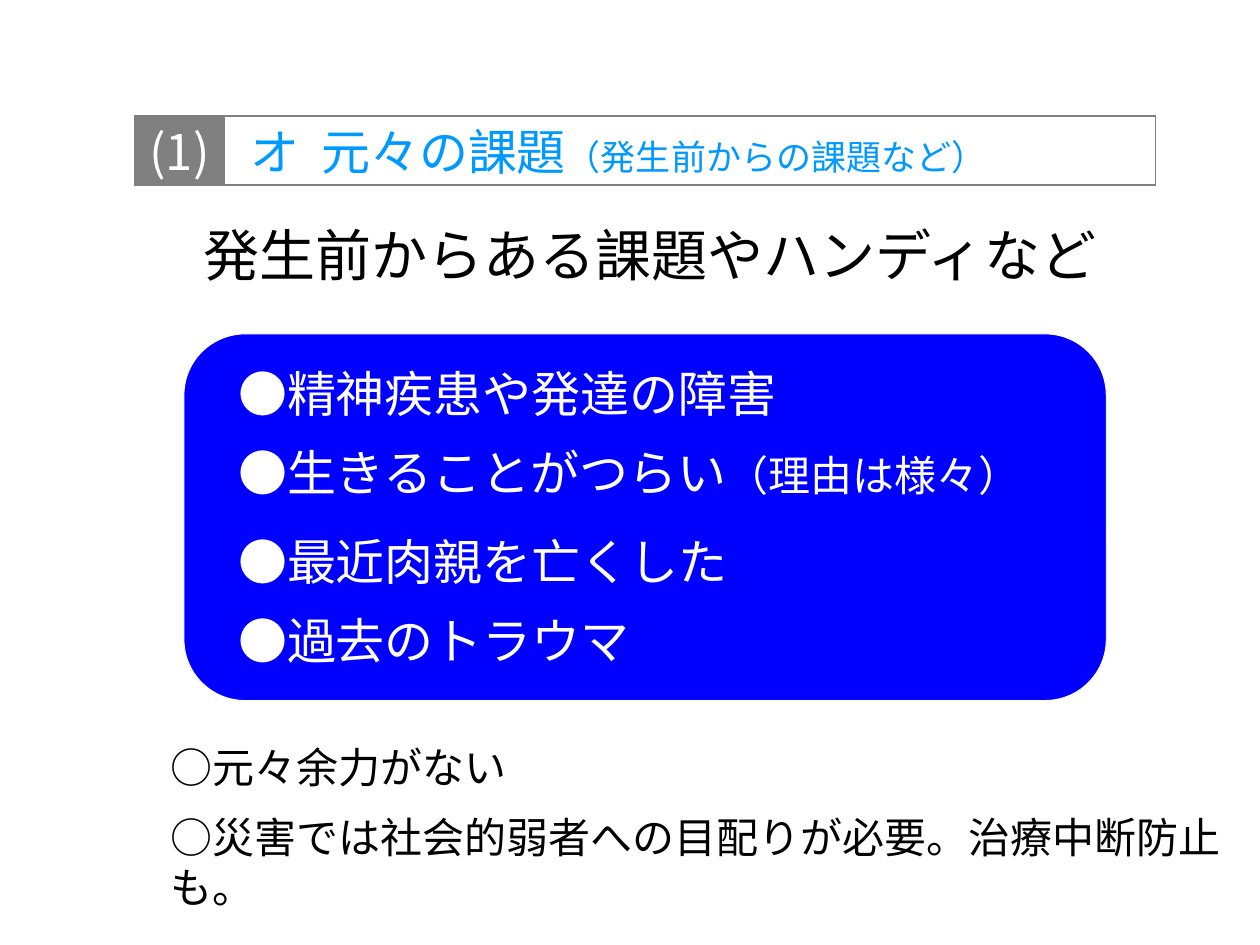
from lxml.etree import SubElement as Sub
from pptx import Presentation
from pptx.dml.color import RGBColor as RGB
from pptx.enum.shapes import MSO_SHAPE as Shape
from pptx.enum.text import MSO_ANCHOR as Anchor, PP_ALIGN as Align
from pptx.oxml.ns import qn
from pptx.util import Inches as In, Pt

# Content: each line is a list of (text, size name) runs
HEAD = [
    dict(runs=[("(1)", "big")], ink="white", fill="gray", face="cjk", left=0.04, align=Align.CENTER),
    dict(runs=[("オ\t元々の課題", "big"), ("（発生前からの課題など）", "small")],
         ink="sky", fill="white", face="latin", left=0.21, align=Align.LEFT),
]
TITLE = [("発生前からある課題やハンディなど", "title")]
ISSUES = [
    [("●精神疾患や発達の障害", "big")],
    [("●生きることがつらい", "big"), ("（理由は様々）", "mid")],
    [("●最近肉親を亡くした", "big")],
    [("●過去のトラウマ", "big")],
]
NOTES = [
    [("○元々余力がない", "mid")],
    [("○災害では社会的弱者への目配りが必要。治療中断防止も。", "mid")],
]

THEME = dict(
    color=dict(white="FFFFFF", black="000000", gray="808080", sky="0099FF", blue="0000FF"),
    size=dict(title=32, big=28, mid=24, small=20),
    face=dict(cjk="Noto Sans CJK JP", latin="Arial"),
    lead=1.19,
)
PAD = dict(margin_left=In(0.04), margin_right=In(0.04), margin_top=In(0.08), margin_bottom=0)
GRID = dict(left=1.85, top=2.81, step=0.63, pair=1.33)
NOTE = dict(left=1.31, top=5.81, step=0.55)
TAB = 0.56


def color(name):
    return RGB.from_string(THEME["color"][name])


def apply(obj, vals):
    for key, val in vals.items():
        setattr(obj, key, val)


def write(para, runs, ink, face="cjk", tight=True):
    if tight:
        para.line_spacing = Pt(round(THEME["size"][runs[0][1]] * THEME["lead"], 1))
    for text, size in runs:
        run = para.add_run()
        run.text = text
        apply(run.font, dict(size=Pt(THEME["size"][size]), name=THEME["face"][face]))
        run.font.color.rgb = color(ink)
        Sub(run.font._element, qn("a:ea"), typeface=THEME["face"]["cjk"])


def label(area, runs, ink, **vals):
    frame = slide.shapes.add_textbox(*map(In, area)).text_frame
    apply(frame, dict(word_wrap=True, **vals))
    return frame.paragraphs[0], runs, ink


def edge(cell):
    props = cell._tc.get_or_add_tcPr()
    for spot, side in enumerate(("lnL", "lnR", "lnT", "lnB")):
        line = props.makeelement(qn("a:" + side), dict(w=str(Pt(1))))
        props.insert(spot, line)
        Sub(Sub(line, qn("a:solidFill")), qn("a:srgbClr"), val=THEME["color"]["gray"])


deck = Presentation()
apply(deck, dict(slide_width=In(10), slide_height=In(7.5)))
slide = deck.slides.add_slide(deck.slide_layouts[6])

# Rounded panel
panel = slide.shapes.add_shape(Shape.ROUNDED_RECTANGLE, *map(In, (1.46, 2.65, 7.32, 2.91)))
panel.shadow.inherit = False
panel.adjustments[0] = 0.167
panel.fill.solid()
panel.fill.fore_color.rgb = color("blue")
panel.line.color.rgb = color("white")
panel.line.width = Pt(0.5)

# Title
para, runs, ink = label((1.3, 1.78, 7.72, 0.47), TITLE, "black", vertical_anchor=Anchor.MIDDLE)
para.alignment = Align.CENTER
write(para, runs, ink, tight=False)

# Issues in two pairs, on the panel
for i, runs in enumerate(ISSUES):
    top = GRID["top"] + i // 2 * GRID["pair"] + i % 2 * GRID["step"]
    write(*label((GRID["left"], top, 6.7, 0.55), runs, "white", **PAD))

# Notes below the panel
for i, runs in enumerate(NOTES):
    top = NOTE["top"] + i * NOTE["step"]
    write(*label((NOTE["left"], top, 8.51, 0.48), runs, "black", **PAD))

# Section heading table
table = slide.shapes.add_table(1, 2, *map(In, (1.07, 0.92, 8.1, 0.55))).table
apply(table, dict(first_row=False, horz_banding=False))
for col, wide in zip(table.columns, (0.71, 7.39)):
    col.width = In(wide)
for cell, part in zip(table.rows[0].cells, HEAD):
    apply(cell, PAD | dict(margin_left=In(part["left"])))
    cell.fill.solid()
    cell.fill.fore_color.rgb = color(part["fill"])
    edge(cell)
    para = cell.text_frame.paragraphs[0]
    para.alignment = part["align"]
    tabs = Sub(para._p.get_or_add_pPr(), qn("a:tabLst"))
    Sub(tabs, qn("a:tab"), pos=str(In(TAB)), algn="l")
    write(para, part["runs"], part["ink"], part["face"])

deck.save("out.pptx")
